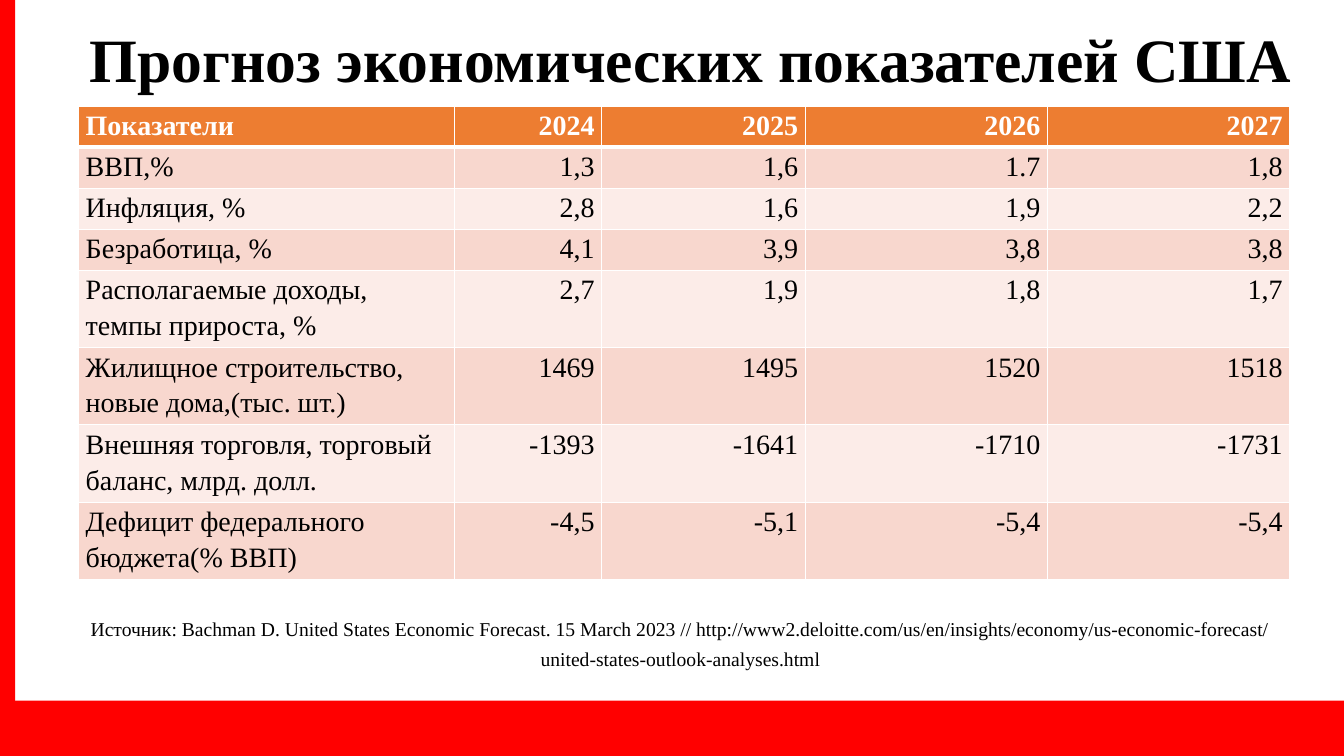
import dataclasses

import pptx
import pptx.dml.color
import pptx.enum.shapes
import pptx.enum.text
import pptx.oxml
import pptx.oxml.ns
import pptx.util

Pt = pptx.util.Pt
RGB = pptx.dml.color.RGBColor.from_string
ALIGN = pptx.enum.text.PP_ALIGN
ANCHOR = pptx.enum.text.MSO_ANCHOR


@dataclasses.dataclass(frozen=True)
class Theme:
    """Colours, type sizes and font of the slide."""
    red: str = "FF0000"
    head: str = "ED7D31"
    dark: str = "F8D7CE"
    light: str = "FCECE8"
    ink: str = "000000"
    white: str = "FFFFFF"
    face: str = "Times New Roman"
    title: int = 44
    cell: int = 20
    note: int = 14


class Deck:
    """Draws styled elements on the current slide."""

    def __init__(self, show, theme):
        self.theme = theme
        self.slide = show.slides.add_slide(show.slide_layouts[6])

    def apply(self, item, form):
        for name, value in form.items():
            setattr(item, name, value)

    def fill_text(self, frame, text, size, color, bold, form):
        para = frame.paragraphs[0]
        self.apply(para, form)
        run = para.add_run()
        run.text = text
        self.apply(run.font, {"name": self.theme.face, "size": Pt(size), "bold": bold})
        run.font.color.rgb = RGB(color)

    def bar(self, *area):
        kind = pptx.enum.shapes.MSO_SHAPE.RECTANGLE
        shape = self.slide.shapes.add_shape(kind, *map(Pt, area))
        shape.shadow.inherit = False
        shape.fill.solid()
        shape.fill.fore_color.rgb = RGB(self.theme.red)
        shape.line.fill.background()

    def label(self, area, text, size, bold=False, space=1.0):
        frame = self.slide.shapes.add_textbox(*map(Pt, area)).text_frame
        sides = ("margin_left", "margin_top", "margin_right", "margin_bottom")
        self.apply(frame, dict.fromkeys(sides, 0))
        self.apply(frame, {"word_wrap": True, "vertical_anchor": ANCHOR.BOTTOM})
        form = {"alignment": ALIGN.CENTER, "line_spacing": space}
        self.fill_text(frame, text, size, self.theme.ink, bold, form)

    def edge(self, cell, sides):
        props = cell._tc.get_or_add_tcPr()
        space = pptx.oxml.ns.nsdecls("a")
        for spot, (side, width) in enumerate(sides.items()):
            props.insert(spot, pptx.oxml.parse_xml(
                f'<a:{side} {space} w="{Pt(width)}"><a:solidFill>'
                f'<a:srgbClr val="{self.theme.white}"/></a:solidFill></a:{side}>'))

    def grid(self, left, top, rows, widths, heights):
        area = map(Pt, (left, top, sum(widths), sum(heights)))
        table = self.slide.shapes.add_table(len(rows), len(widths), *area).table
        for col, width in zip(table.columns, widths):
            col.width = Pt(width)
        for row, height in zip(table.rows, heights):
            row.height = Pt(height)
        look = self.theme
        for r, row in enumerate(rows):
            fill = look.head if r == 0 else (look.light, look.dark)[r % 2]
            color = look.white if r == 0 else look.ink
            for c, text in enumerate(row):
                cell = table.cell(r, c)
                self.apply(cell, {"margin_left": Pt(5), "margin_right": Pt(5),
                                  "margin_top": 0, "margin_bottom": 0})
                cell.fill.solid()
                cell.fill.fore_color.rgb = RGB(fill)
                self.edge(cell, {"lnL": 1, "lnR": 1, "lnT": 3 if r == 1 else 1,
                                 "lnB": 3 if r == 0 else 1})
                form = {"alignment": ALIGN.RIGHT if c else ALIGN.LEFT,
                        "line_spacing": 1.15, "space_after": Pt(10)}
                self.fill_text(cell.text_frame, text, look.cell, color, r == 0, form)


ROWS = [
    ("Показатели", "2024", "2025", "2026", "2027"),
    ("ВВП,%", "1,3", "1,6", "1.7", "1,8"),
    ("Инфляция, %", "2,8", "1,6", "1,9", "2,2"),
    ("Безработица, %", "4,1", "3,9", "3,8", "3,8"),
    ("Располагаемые доходы, темпы прироста, %", "2,7", "1,9", "1,8", "1,7"),
    ("Жилищное строительство, новые дома,(тыс. шт.)", "1469", "1495", "1520", "1518"),
    ("Внешняя торговля, торговый баланс, млрд. долл.", "-1393", "-1641", "-1710", "-1731"),
    ("Дефицит федерального бюджета(% ВВП)", "-4,5", "-5,1", "-5,4", "-5,4"),
]
SOURCE = ("Источник: Bachman D. United States Economic Forecast. 15 March 2023 // "
          "http://www2.deloitte.com/us/en/insights/economy/us-economic-forecast/"
          "united-states-outlook-analyses.html")


def main():
    show = pptx.Presentation()
    show.slide_width, show.slide_height = Pt(960), Pt(540)
    theme = Theme()
    deck = Deck(show, theme)
    deck.bar(0, 0, 10.8, 540)
    deck.label((46, 14.4, 895, 53.3), "Прогноз экономических показателей США",
               theme.title, bold=True)
    deck.grid(56.2, 75.8, ROWS, (268.5, 105, 145.5, 173, 173),
              [29.3] * 4 + [55.3] * 4)
    deck.bar(0, 500.4, 960, 39.6)
    deck.label((52.6, 423.4, 867, 55.4), SOURCE, theme.note, space=1.25)
    show.save("out.pptx")


if __name__ == "__main__":
    main()
